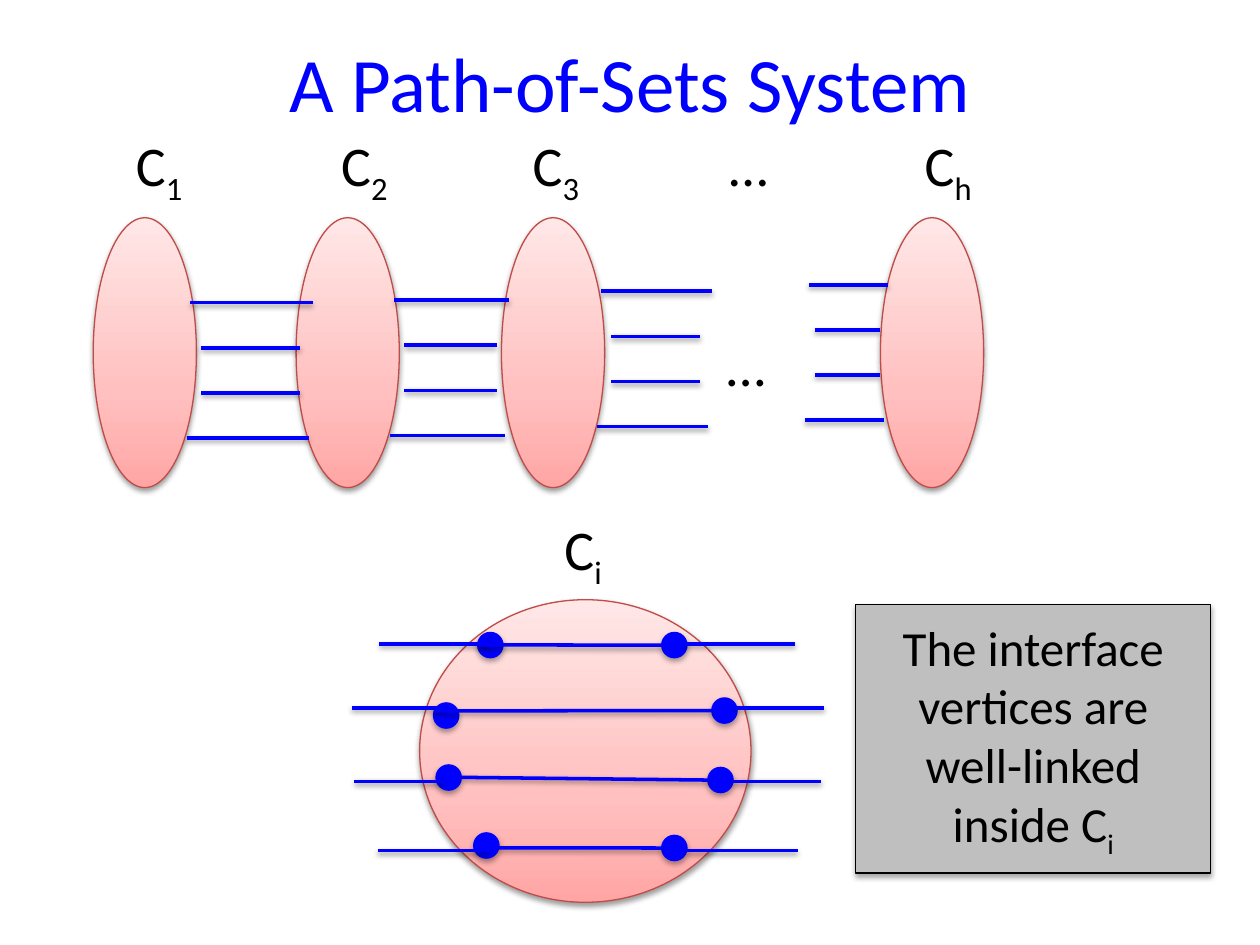
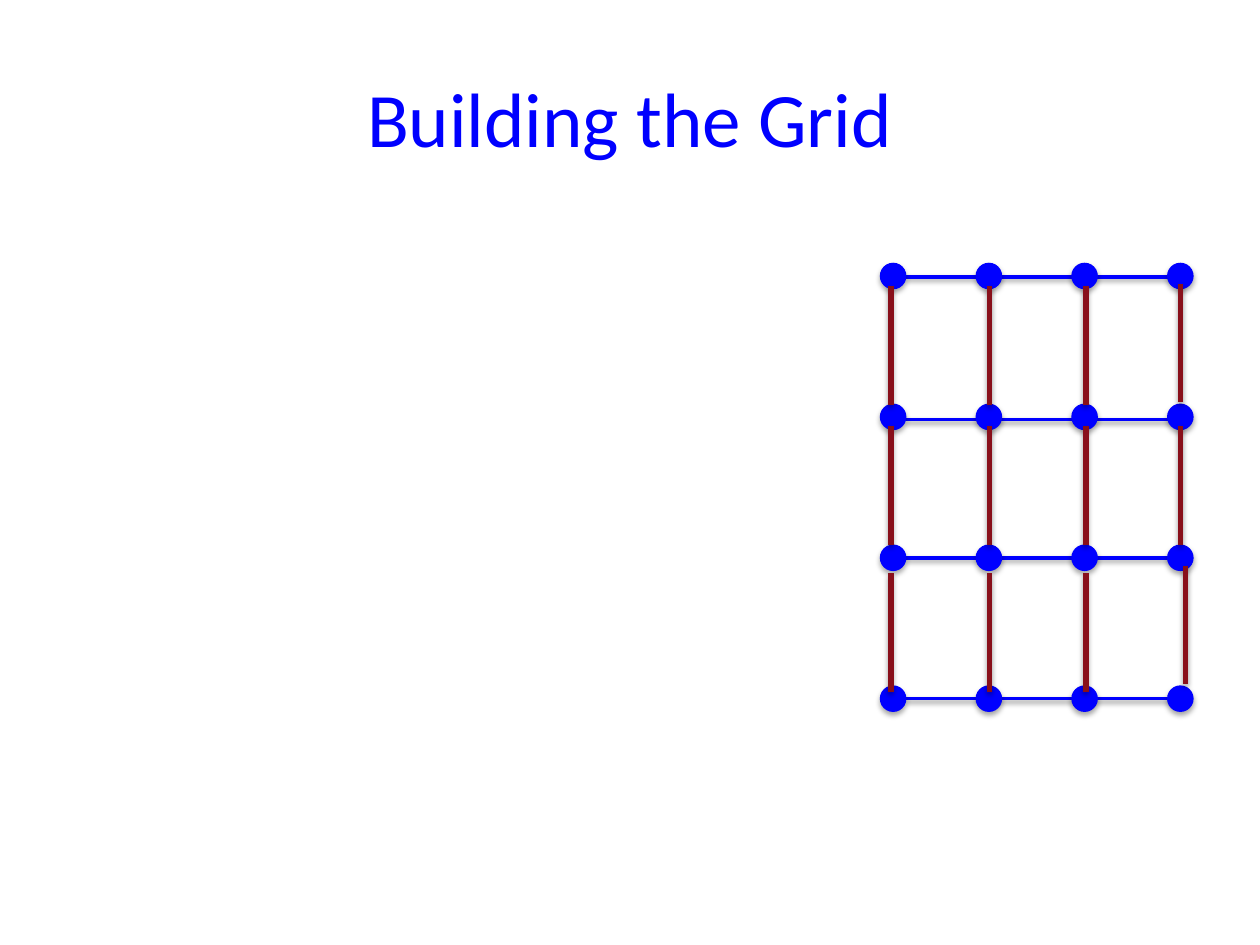
"""Build two slides on the path-of-sets system and the grid made from it."""
from dataclasses import dataclass
from typing import Any

from lxml.etree import SubElement
from pptx import Presentation
from pptx.dml.color import RGBColor
from pptx.enum.shapes import MSO_CONNECTOR as Connector, MSO_SHAPE as Preset
from pptx.enum.text import MSO_ANCHOR as Anchor, MSO_AUTO_SIZE as AutoSize, PP_ALIGN as Align
from pptx.oxml.ns import qn
from pptx.util import Cm, Pt

COLOURS = {
    "blue": "0000FF",
    "black": "000000",
    "grey": "BFBFBF",
    "edge": "89101B",
    "outline": "BF4C48",
}
SET_GRADIENT = {0: "FFA6A5", 35: "FFC0BF", 100: "FFE7E7"}
FONT = "Calibri"
DOT_SIZE = 0.51
TITLE_FRAME = {"vertical_anchor": Anchor.MIDDLE, "word_wrap": True, "auto_size": AutoSize.NONE}
LABEL_FRAME = {"word_wrap": True, "auto_size": AutoSize.SHAPE_TO_FIT_TEXT}
BOX_FRAME = {"word_wrap": True, "vertical_anchor": Anchor.MIDDLE}


@dataclass(frozen=True)
class Box:
    left: float
    top: float
    width: float
    height: float

    def lengths(self) -> list[Cm]:
        return [Cm(value) for value in (self.left, self.top, self.width, self.height)]


@dataclass(frozen=True)
class Shadow:
    distance: float
    opacity: int


@dataclass(frozen=True)
class Label:
    box: Box
    text: str
    subscript: str = ""


@dataclass(frozen=True)
class Stroke:
    start: tuple[float, float]
    end: tuple[float, float]
    colour: str = "blue"
    points: float = 2


@dataclass(frozen=True)
class Bundle:
    left: float
    right: float
    inner_left: float
    inner_right: float
    top: float

    def strokes(self) -> list[Stroke]:
        shift = 0.08
        spans = [
            (self.left, self.right),
            (self.inner_left, self.inner_right),
            (self.inner_left, self.inner_right),
            (self.left - shift, self.right - shift),
        ]
        heights = [self.top + 0.91 * row for row in range(4)]
        return [Stroke((left, y), (right, y)) for (left, right), y in zip(spans, heights)]


@dataclass(frozen=True)
class LinkedPath:
    left_dot: tuple[float, float]
    right_dot: tuple[float, float]
    link_start: tuple[float, float]
    wire_y: float
    left_wire: tuple[float, float]
    right_wire: tuple[float, float]

    def strokes(self) -> list[Stroke]:
        link_end = (self.right_dot[0], self.right_dot[1] + DOT_SIZE / 2)
        wires = [
            Stroke((start, self.wire_y), (end, self.wire_y))
            for start, end in (self.left_wire, self.right_wire)
        ]
        return [*wires, Stroke(self.link_start, link_end)]


LINE_SHADOW = Shadow(1.6, 38)
DOT_SHADOW = Shadow(1.8, 35)

SET_LEFTS = [1.88, 5.97, 10.11, 17.75]
SET_LABELS = [
    Label(Box(left, 2.51, 1.78, 1.63), text, subscript)
    for left, text, subscript in [
        (2.49, "C", "1"),
        (6.63, "C", "2"),
        (10.49, "C", "3"),
        (14.45, "…", ""),
        (18.39, "C", "h"),
    ]
]
OTHER_LABELS = [
    Label(Box(14.4, 6.53, 1.45, 1.3), "…"),
    Label(Box(11.13, 10.24, 1.6, 1.63), "C", "i"),
]
BUNDLES = [
    Bundle(3.84, 6.3, 4.06, 6.05, 6.1),
    Bundle(7.95, 10.26, 8.15, 10.01, 6.05),
    Bundle(12.12, 14.35, 12.32, 14.12, 5.87),
    Bundle(16.31, 17.91, 16.43, 17.73, 5.74),
]
LINKED_PATHS = [
    LinkedPath((9.63, 12.75), (13.34, 12.75), (9.63, 13), 12.98, (7.65, 9.88), (13.79, 16.03)),
    LinkedPath((8.74, 14.17), (14.35, 14.07), (8.74, 14.33), 14.27, (7.09, 8.89), (14.81, 16.61)),
    LinkedPath((8.79, 15.42), (14.27, 15.47), (9.3, 15.67), 15.75, (7.14, 8.94), (14.76, 16.56)),
    LinkedPath((9.55, 16.79), (13.34, 16.84), (10.06, 17.09), 17.15, (7.62, 9.86), (13.84, 16.08)),
]

GRID_ROW_LINES = [5.58, 8.46, 11.25, 14.08]
GRID_EDGE_COLUMNS = [17.96, 19.94, 21.89]
GRID_EDGE_TOPS = [5.77, 8.59, 11.56]
LAST_COLUMN_EDGES = [(23.8, 5.72), (23.8, 8.59), (23.9, 11.4)]


def rgb(name: str) -> RGBColor:
    return RGBColor.from_string(COLOURS[name])


def apply_format(target: Any, values: dict[str, Any]) -> None:
    for name, value in values.items():
        setattr(target, name, value)


def set_line(line: Any, colour: str, points: float) -> None:
    line.color.rgb = rgb(colour)
    line.width = Pt(points)


def add_shadow(properties: Any, shadow: Shadow) -> None:
    effects = properties.find(qn("a:effectLst"))
    if effects is None:
        effects = SubElement(properties, qn("a:effectLst"))
    outer = SubElement(
        effects,
        qn("a:outerShdw"),
        blurRad=str(Pt(3.1)),
        dist=str(Pt(shadow.distance)),
        dir="5400000",
        rotWithShape="0",
    )
    colour = SubElement(outer, qn("a:srgbClr"), val=COLOURS["black"])
    SubElement(colour, qn("a:alpha"), val=str(shadow.opacity * 1000))


def write_text(frame: Any, text: str, subscript: str, size: int, colour: str, align: Align) -> None:
    paragraph = frame.paragraphs[0]
    paragraph.alignment = align
    for part, baseline in ((text, 0), (subscript, -25000)):
        if part:
            run = paragraph.add_run()
            run.text = part
            apply_format(run.font, {"name": FONT, "size": Pt(size)})
            run.font.color.rgb = rgb(colour)
            if baseline:
                run.font._element.set("baseline", str(baseline))


def add_titled_slide(presentation: Any, title: str, top: float) -> Any:
    slide = presentation.slides.add_slide(presentation.slide_layouts[5])
    shape = slide.shapes.title
    left, top_length, width, height = Box(1.27, top, 22.86, 3.18).lengths()
    apply_format(shape, {"left": left, "top": top_length, "width": width, "height": height})
    apply_format(shape.text_frame, TITLE_FRAME)
    write_text(shape.text_frame, title, "", 44, "blue", Align.CENTER)
    return slide


def add_label(slide: Any, label: Label) -> None:
    frame = slide.shapes.add_textbox(*label.box.lengths()).text_frame
    apply_format(frame, LABEL_FRAME)
    write_text(frame, label.text, label.subscript, 32, "black", Align.LEFT)


def add_outlined(slide: Any, preset: Preset, box: Box, outline: str, shadow: Shadow) -> Any:
    shape = slide.shapes.add_shape(preset, *box.lengths())
    set_line(shape.line, outline, 0.75)
    shape.shadow.inherit = False
    add_shadow(shape.element.spPr, shadow)
    return shape


def add_set(slide: Any, box: Box) -> None:
    shape = add_outlined(slide, Preset.OVAL, box, "outline", LINE_SHADOW)
    shape.fill.gradient()
    shape.fill.gradient_angle = 90
    stops = shape.element.spPr.find(".//" + qn("a:gsLst"))
    stops.clear()
    for percent, colour in SET_GRADIENT.items():
        stop = SubElement(stops, qn("a:gs"), pos=str(percent * 1000))
        SubElement(stop, qn("a:srgbClr"), val=colour)


def add_solid(slide: Any, preset: Preset, box: Box, fill: str, outline: str) -> Any:
    shape = add_outlined(slide, preset, box, outline, DOT_SHADOW)
    shape.fill.solid()
    shape.fill.fore_color.rgb = rgb(fill)
    return shape


def add_dot(slide: Any, left: float, top: float) -> None:
    add_solid(slide, Preset.OVAL, Box(left, top, DOT_SIZE, DOT_SIZE), "blue", "blue")


def add_stroke(slide: Any, stroke: Stroke) -> None:
    ends = [Cm(value) for value in (*stroke.start, *stroke.end)]
    connector = slide.shapes.add_connector(Connector.STRAIGHT, *ends)
    set_line(connector.line, stroke.colour, stroke.points)
    add_shadow(connector.element.spPr, LINE_SHADOW)


def build_path_of_sets(presentation: Any) -> None:
    slide = add_titled_slide(presentation, "A Path-of-Sets System", 0.05)
    for left in SET_LEFTS:
        add_set(slide, Box(left, 4.39, 2.08, 5.44))
    add_set(slide, Box(8.46, 12.09, 6.68, 6.1))
    for label in SET_LABELS + OTHER_LABELS:
        add_label(slide, label)
    for path in LINKED_PATHS:
        for dot in (path.left_dot, path.right_dot):
            add_dot(slide, *dot)
    for source in BUNDLES + LINKED_PATHS:
        for stroke in source.strokes():
            add_stroke(slide, stroke)
    note = add_solid(slide, Preset.RECTANGLE, Box(17.25, 12.19, 7.16, 5.41), "grey", "black")
    apply_format(note.text_frame, BOX_FRAME)
    text = "The interface vertices are well-linked inside C"
    write_text(note.text_frame, text, "i", 28, "black", Align.CENTER)


def build_grid(presentation: Any) -> None:
    slide = add_titled_slide(presentation, "Building the Grid", 0.76)
    for y in GRID_ROW_LINES:
        add_stroke(slide, Stroke((18.26, y), (23.8, y)))
    for row in range(4):
        for column in range(4):
            add_dot(slide, 17.75 + 1.93 * column, 5.31 + 2.84 * row)
    edges = [(x, top) for x in GRID_EDGE_COLUMNS for top in GRID_EDGE_TOPS]
    for x, top in edges + LAST_COLUMN_EDGES:
        add_stroke(slide, Stroke((x, top), (x, top + 2.39), "edge", 3))


def main() -> None:
    presentation = Presentation()
    apply_format(presentation, {"slide_width": Cm(25.4), "slide_height": Cm(19.05)})
    build_path_of_sets(presentation)
    build_grid(presentation)
    presentation.save("out.pptx")


if __name__ == "__main__":
    main()
